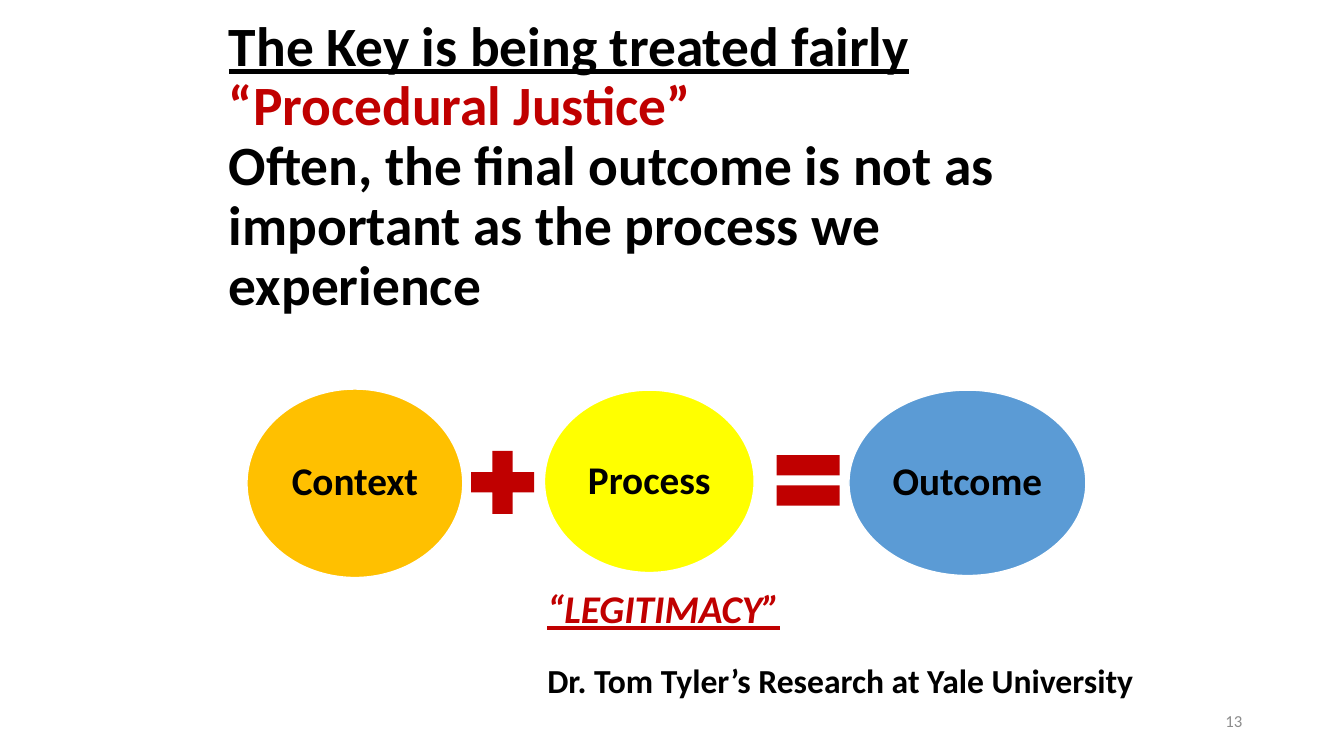
"""Build the procedural justice slide: a title over Context + Process = Outcome."""
from lxml import etree
from pptx import Presentation
from pptx.dml.color import RGBColor
from pptx.enum import shapes, text
from pptx.oxml.ns import qn
from pptx.util import Pt

PX = 9144
RED, BLACK, WHITE = "C00000", "000000", "FFFFFF"
KIND = shapes.MSO_SHAPE


def box(*lengths):
    return [n * PX for n in lengths]


def style(r, size, color, bold=True, italic=False, underline=False):
    r.font.name = "Calibri"
    r.font.size = Pt(size)
    r.font.bold = bold
    r.font.italic = italic
    r.font.underline = underline
    r.font.color.rgb = RGBColor.from_string(color)


prs = Presentation()
prs.slide_width, prs.slide_height = box(1333, 750)
slide = prs.slides.add_slide(prs.slide_layouts[5])

title = slide.shapes.title
title.left, title.top, title.width, title.height = box(217, 0, 900, 333)
tf = title.text_frame
tf.text = ("The Key is being treated fairly\v“Procedural Justice”\v"
           "Often, the final outcome is not as important as the process we experience")
tf.word_wrap = True
tf.auto_size = text.MSO_AUTO_SIZE.NONE
tf.vertical_anchor = text.MSO_ANCHOR.MIDDLE
p = tf.paragraphs[0]
p.alignment = text.PP_ALIGN.LEFT
p.line_spacing = 0.9
for r, color, underline in zip(p.runs, (BLACK, RED, BLACK), (True, False, False)):
    style(r, 39.6, color, underline=underline)
for br in p._p.findall(qn("a:br")):
    etree.SubElement(br, qn("a:rPr"), sz="3960")

equation = slide.shapes.add_group_shape()
for kind, label, place, fill in (
    (KIND.OVAL, "Context", (245, 386, 214, 187), "FFC000"),
    (KIND.MATH_PLUS, "", (456, 436, 85, 85), RED),
    (KIND.OVAL, "Process", (540, 387, 208, 181), "FFFF00"),
    (KIND.MATH_EQUAL, "", (759, 434, 85, 85), RED),
    (KIND.OVAL, "Outcome", (842, 387, 235, 184), "5B9BD5"),
):
    sp = equation.shapes.add_shape(kind, *box(*place))
    sp.shadow.inherit = False
    sp.fill.solid()
    sp.fill.fore_color.rgb = RGBColor.from_string(fill)
    if not label:
        sp.line.fill.background()
        continue
    sp.line.color.rgb = RGBColor.from_string(WHITE)
    sp.line.width = Pt(1)
    tf = sp.text_frame
    tf.text = label
    tf.word_wrap = True
    tf.vertical_anchor = text.MSO_ANCHOR.MIDDLE
    tf.margin_left = tf.margin_top = tf.margin_right = tf.margin_bottom = 4 * PX
    p = tf.paragraphs[0]
    p.alignment = text.PP_ALIGN.CENTER
    p.line_spacing = 0.9
    style(p.runs[0], 28, BLACK)

for words, place, align, anchor, look in (
    ("13", (942, 695, 300, 40), text.PP_ALIGN.RIGHT, text.MSO_ANCHOR.MIDDLE,
     (12, "8C8C8C", False)),
    ("Dr. Tom Tyler’s Research at Yale University", (533, 650, 608, 50),
     text.PP_ALIGN.LEFT, text.MSO_ANCHOR.TOP, (24, BLACK)),
    ("“LEGITIMACY”", (533, 575, 300, 57), text.PP_ALIGN.LEFT, text.MSO_ANCHOR.TOP,
     (28, RED, True, True, True)),
):
    tf = slide.shapes.add_textbox(*box(*place)).text_frame
    tf.text = words
    tf.word_wrap = True
    tf.vertical_anchor = anchor
    p = tf.paragraphs[0]
    p.alignment = align
    style(p.runs[0], *look)

prs.save("out.pptx")
